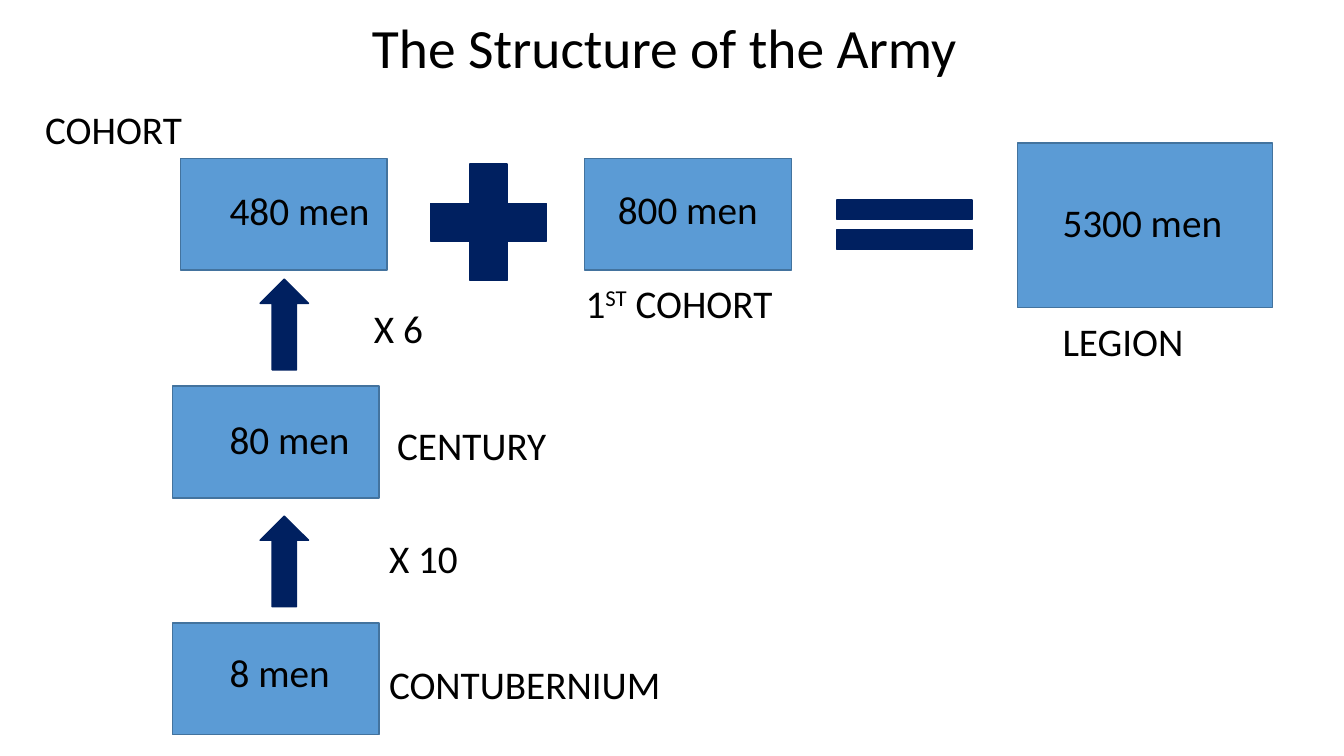
from pptx import Presentation
from pptx import util as u
from pptx.dml.color import RGBColor
from pptx.enum import shapes, text

BLACK = RGBColor(0x00, 0x00, 0x00)
BLUE = RGBColor(0x5B, 0x9B, 0xD5)
BLUE_EDGE = RGBColor(0x43, 0x73, 0x9E)
NAVY = RGBColor(0x00, 0x20, 0x60)

SHAPE = shapes.MSO_SHAPE
UNIT_WIDTH, UNIT_HEIGHT = 2.05, 1.11
MEN_WIDTH, LABEL_WIDTH, WORDS_HEIGHT = 2.87, 3.88, 0.57


def add_words(page, box, words, size=28, line_spacing=1.0,
              align=text.PP_ALIGN.LEFT, anchor=text.MSO_ANCHOR.TOP):
    """Add a text box; words is a string or a list of (string, superscript)."""
    frame = page.shapes.add_textbox(*map(u.Inches, box)).text_frame
    frame.word_wrap = True
    frame.vertical_anchor = anchor
    para = frame.paragraphs[0]
    para.alignment = align
    para.line_spacing = line_spacing
    spans = [(words, False)] if isinstance(words, str) else words
    for string, superscript in spans:
        span = para.add_run()
        span.text = string
        for name, value in {"name": "Calibri", "size": u.Pt(size)}.items():
            setattr(span.font, name, value)
        span.font.color.rgb = BLACK
        if superscript:
            span._r.get_or_add_rPr().set("baseline", "30000")


def add_block(page, kind, box, fill=NAVY, edge=NAVY):
    block = page.shapes.add_shape(kind, *map(u.Inches, box))
    block.shadow.inherit = False
    block.fill.solid()
    block.fill.fore_color.rgb = fill
    block.line.color.rgb = edge
    block.line.width = u.Pt(1)


def add_unit(page, box, men, men_offset, label, label_offset,
             label_width=LABEL_WIDTH):
    """Draw one army unit; both offsets are from the corner of its box."""
    left, top, width, height = box
    add_block(page, SHAPE.RECTANGLE, box, BLUE, BLUE_EDGE)
    for words, (right, down), words_width, spacing in (
            (men, men_offset, MEN_WIDTH, 0.9),
            (label, label_offset, label_width, 1.0)):
        add_words(page, (left + right, top + down, words_width, WORDS_HEIGHT),
                  words, line_spacing=spacing)


def add_title(page, box):
    add_words(page, box, "The Structure of the Army", 39.6, 0.9,
              text.PP_ALIGN.CENTER, text.MSO_ANCHOR.MIDDLE)


def add_build_up(page, left, top):
    """Stack contubernium, century and cohort, joined by upward arrows."""
    units = (
        (0.08, 0, "480 men", (0.39, 0.28), "COHORT", (-1.44, -0.57)),
        (0, 2.26, "80 men", (0.47, 0.29), "CENTURY", (2.13, 0.3)),
        (0, 4.61, "8 men", (0.47, 0.26), "CONTUBERNIUM", (2.05, 0.32)),
    )
    for right, down, *details in units:
        add_unit(page, (left + right, top + down, UNIT_WIDTH, UNIT_HEIGHT), *details)

    steps = ((1.2, "X 6", (1.9, 1.4)), (3.55, "X 10", (2.05, 3.68)))
    for arrow_down, factor, (right, down) in steps:
        add_block(page, SHAPE.UP_ARROW, (left + 0.87, top + arrow_down, 0.48, 0.9))
        add_words(page, (left + right, top + down, LABEL_WIDTH, WORDS_HEIGHT), factor)


def add_legion_sum(page, left, top):
    """Continue the cohort to the right: plus first cohort equals legion."""
    add_block(page, SHAPE.MATH_PLUS, (left, top, 1.57, 1.57))
    add_unit(page, (left + 1.74, top + 0.15, UNIT_WIDTH, UNIT_HEIGHT),
             "800 men", (0.23, 0.27),
             [("1", False), ("ST", True), (" COHORT", False)], (-0.09, 1.15))
    add_block(page, SHAPE.MATH_EQUAL, (left + 4, top + 0.39, 1.82, 0.84))
    add_unit(page, (left + 6.03, top, 2.53, 1.63),
             "5300 men", (0.35, 0.55), "LEGION", (0.35, 1.68), MEN_WIDTH)


def main():
    deck = Presentation()
    deck.slide_width, deck.slide_height = u.Inches(13.33), u.Inches(7.5)
    page = deck.slides.add_slide(deck.slide_layouts[6])
    add_title(page, (0.84, 0.25, 11.5, 0.51))
    add_build_up(page, 1.71, 1.57)
    add_legion_sum(page, 4.06, 1.42)
    deck.save("out.pptx")


if __name__ == "__main__":
    main()
